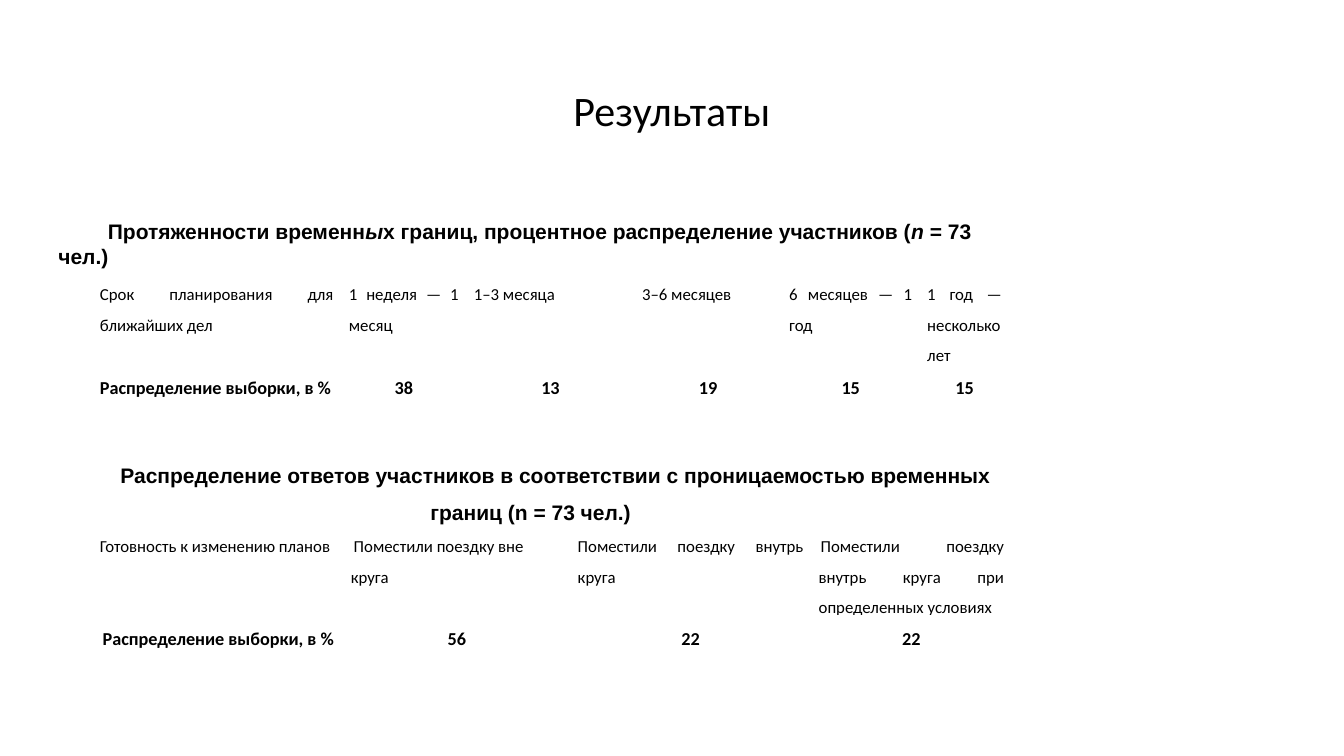
import pptx
import pptx.dml.color
import pptx.enum.text
import pptx.oxml.ns
import pptx.util
from lxml import etree

Pt = pptx.util.Pt
ALIGN = pptx.enum.text.PP_ALIGN
ANCHOR = pptx.enum.text.MSO_ANCHOR
BLACK, WHITE = "000000", "FFFFFF"


def rgb(value):
    return pptx.dml.color.RGBColor.from_string(value)


def format_paragraph(p, font, size, bold=False, align=None, spacing=None, indent=0):
    p.alignment = align
    p.line_spacing = spacing
    if indent:
        pPr = p._p.get_or_add_pPr()
        pPr.set("marL", "0")
        pPr.set("indent", str(Pt(indent)))
    for r in p.runs:
        r.font.name = font
        r.font.size = Pt(size)
        r.font.bold = bold
        r.font.color.rgb = rgb(BLACK)


def add_border(cell, side, width):
    tcPr = cell._tc.get_or_add_tcPr()
    qn = pptx.oxml.ns.qn
    ln = etree.SubElement(tcPr, qn("a:ln" + side), w=str(Pt(width)))
    fill = etree.SubElement(ln, qn("a:solidFill"))
    etree.SubElement(fill, qn("a:srgbClr"), val=WHITE)


def add_title(s, text, x, y, w, h):
    sp = s.shapes.title
    sp.left, sp.top, sp.width, sp.height = Pt(x), Pt(y), Pt(w), Pt(h)
    tf = sp.text_frame
    tf.text = text
    tf.vertical_anchor = ANCHOR.MIDDLE
    format_paragraph(tf.paragraphs[0], "Calibri", 30, align=ALIGN.CENTER, spacing=0.9)


def add_caption(s, parts, x, y, w, h, align=None, spacing=None):
    sp = s.shapes.add_textbox(Pt(x), Pt(y), Pt(w), Pt(h))
    tf = sp.text_frame
    tf.word_wrap = True
    tf.auto_size = pptx.enum.text.MSO_AUTO_SIZE.SHAPE_TO_FIT_TEXT
    p = tf.paragraphs[0]
    for i, text in enumerate(parts):
        r = p.add_run()
        r.text = text
        r.font.italic = i % 2 == 1
    format_paragraph(p, "Arial", 15, True, align, spacing, 35.4)


def add_results(s, rows, x, y, widths, heights, indents, header_aligns):
    frame = s.shapes.add_table(len(rows), len(widths), Pt(x), Pt(y),
                               Pt(sum(widths)), Pt(sum(heights)))
    table = frame.table
    table.first_row = table.horz_banding = False
    for column, width in zip(table.columns, widths):
        column.width = Pt(width)
    for i, values in enumerate(rows):
        table.rows[i].height = Pt(heights[i])
        for j, value in enumerate(values):
            cell = table.cell(i, j)
            cell.margin_left = cell.margin_right = Pt(5.4)
            cell.margin_top = cell.margin_bottom = 0
            for side in "LRTB":
                thick = (i, side) in ((0, "B"), (1, "T"))
                add_border(cell, side, 3 if thick else 1)
            cell.fill.solid()
            cell.fill.fore_color.rgb = rgb(WHITE)
            cell.text_frame.text = value
            if i == 0:
                align = header_aligns[j]
            else:
                align = ALIGN.CENTER if j else ALIGN.JUSTIFY
            format_paragraph(cell.text_frame.paragraphs[0], "Calibri", 13 if i else 12,
                             i > 0, align, 1.5, indents.get((i, j), 0))


def build_results_slide(prs):
    s = prs.slides.add_slide(prs.slide_layouts[5])
    add_title(s, "Результаты", 66, 28.8, 828, 104.4)

    planning = [
        ["Срок планирования для ближайших дел", "1 неделя — 1 месяц", "1–3 месяца",
         "3–6 месяцев", "6 месяцев — 1 год", "1 год — несколько лет"],
        ["Распределение выборки, в %", "38", "13", "19", "15", "15"],
    ]
    add_results(s, planning, 66, 195.8, [177.8, 89.3, 120.2, 105.1, 98.6, 64.1],
                [55.4, 47.5], {}, [ALIGN.JUSTIFY] * 6)
    add_caption(s, ["Протяженности временн", "ы",
                    "х границ, процентное распределение участников (", "n", " = 73 чел.)"],
                34.6, 152.6, 706, 25.2)

    openness = [
        ["Готовность к изменению планов", "Поместили поездку вне круга",
         "Поместили поездку внутрь круга",
         "Поместили поездку внутрь круга при определенных условиях"],
        ["Распределение выборки, в %", "56", "22", "22"],
    ]
    add_results(s, openness, 66, 375.8, [179.3, 162, 172.1, 143.3], [65, 23.6],
                {(0, 1): 2, (0, 3): 1.4, (1, 0): 2},
                [ALIGN.JUSTIFY, ALIGN.LEFT, ALIGN.JUSTIFY, ALIGN.JUSTIFY])
    add_caption(s, ["Распределение ответов участников в соответствии с проницаемостью "
                    "временных границ (n = 73 чел.)"],
                36, 317.5, 686.2, 58.3, ALIGN.CENTER, 1.5)


def main():
    prs = pptx.Presentation()
    prs.slide_width, prs.slide_height = Pt(960), Pt(540)
    build_results_slide(prs)
    prs.save("out.pptx")


if __name__ == "__main__":
    main()
